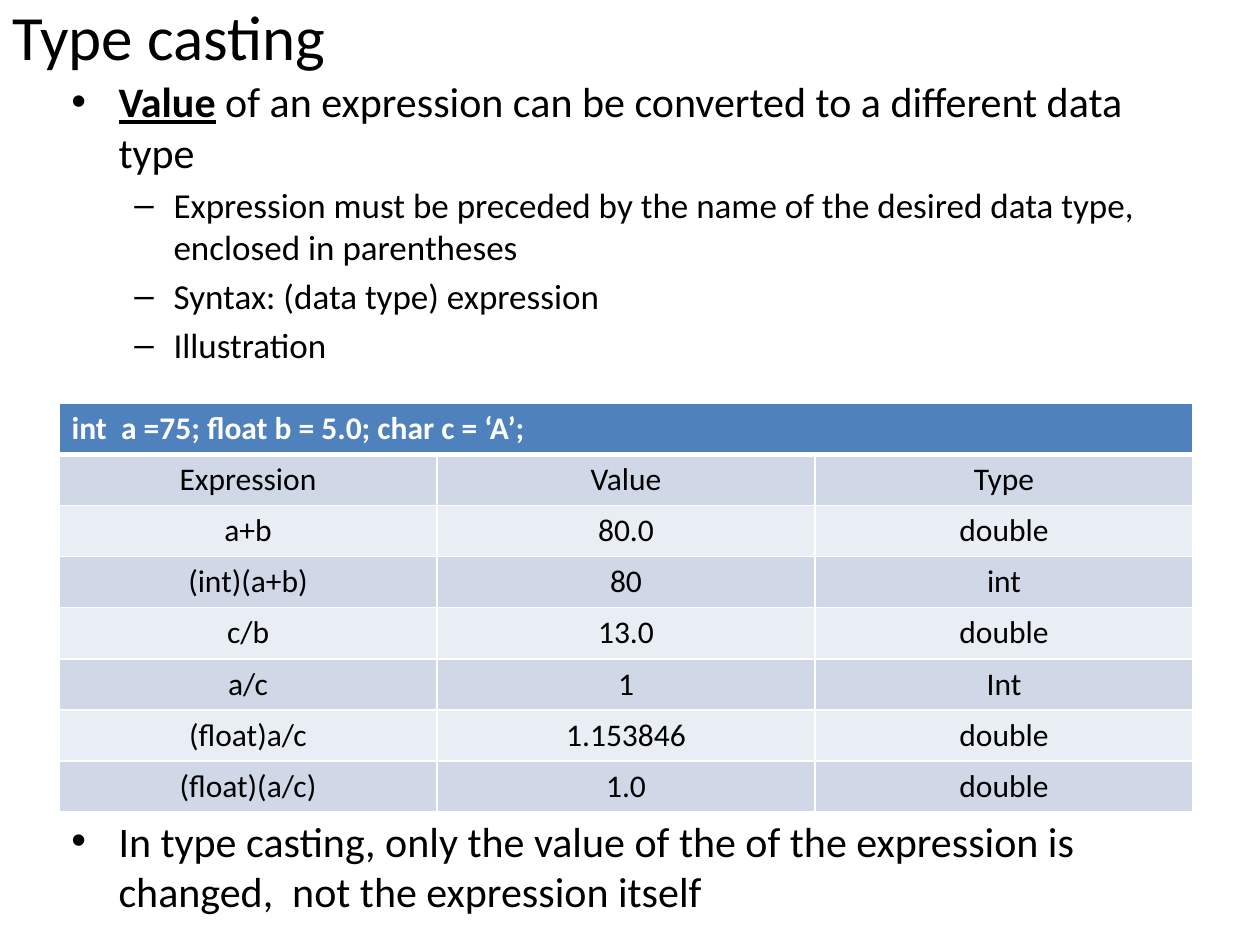
import pptx
import pptx.dml.color
import pptx.enum.text
import pptx.oxml.ns
import pptx.util
from lxml import etree

Cm = pptx.util.Cm
Pt = pptx.util.Pt
RGBColor = pptx.dml.color.RGBColor

BLACK = RGBColor(0x00, 0x00, 0x00)
WHITE = RGBColor(0xFF, 0xFF, 0xFF)
HEADER_BLUE = RGBColor(0x4F, 0x81, 0xBD)
BAND_DARK = RGBColor(0xD0, 0xD8, 0xE8)
BAND_LIGHT = RGBColor(0xE9, 0xED, 0xF4)

FONT = "Calibri"
LEFT = Cm(1.19)
CONTENT_WIDTH = Cm(22.86)
ROW_HEIGHT = Cm(1.03)

# Per level: bullet, text indent, hanging indent, text size
LEVELS = [
    ("•", Cm(0.95), Cm(0.95), 24),
    ("–", Cm(2.06), Cm(0.79), 20),
]
SPACE_BELOW_ILLUSTRATION = Pt(257)  # leaves room for the table

DECLARATION = "int  a =75; float b = 5.0; char c = ‘A’;"
ROWS = [
    ("Expression", "Value", "Type"),
    ("a+b", "80.0", "double"),
    ("(int)(a+b)", "80", "int"),
    ("c/b", "13.0", "double"),
    ("a/c", "1", "Int"),
    ("(float)a/c", "1.153846", "double"),
    ("(float)(a/c)", "1.0", "double"),
]


def format_runs(paragraph, size, color=BLACK, bold=False):
    for run in paragraph.runs:
        run.font.name = FONT
        run.font.size = Pt(size)
        run.font.color.rgb = color
        run.font.bold = bold


def add_child(parent, tag, **attributes):
    child = etree.SubElement(parent, pptx.oxml.ns.qn(tag))
    for name, value in attributes.items():
        child.set(name, str(value))
    return child


def set_title(slide, text):
    title = slide.shapes.title
    title.left, title.top, title.width, title.height = 0, 0, Cm(22.86), Cm(1.42)
    frame = title.text_frame
    frame.text = text
    frame.auto_size = pptx.enum.text.MSO_AUTO_SIZE.NONE
    frame.vertical_anchor = pptx.enum.text.MSO_ANCHOR.MIDDLE
    paragraph = frame.paragraphs[0]
    paragraph.alignment = pptx.enum.text.PP_ALIGN.LEFT
    format_runs(paragraph, 36)


def format_bullet(paragraph, level):
    bullet, indent, hanging, size = LEVELS[level]
    paragraph.level = level
    paragraph.space_before = Pt(size * 0.2)
    format_runs(paragraph, size)
    properties = paragraph._p.get_or_add_pPr()
    properties.set("marL", str(indent))
    properties.set("indent", str(-hanging))
    add_child(properties, "a:buFont", typeface="Arial")
    add_child(properties, "a:buChar", char=bullet)


def add_bullets(slide):
    items = [
        (0, "Value"),
        (1, "Expression must be preceded by the name of the desired data type, "
            "enclosed in parentheses"),
        (1, "Syntax: (data type) expression"),
        (1, "Illustration"),
        (0, "In type casting, only the value of the of the expression is changed,  "
            "not the expression itself"),
    ]
    box = slide.shapes.add_textbox(LEFT, Cm(1.4), CONTENT_WIDTH, Cm(15.24))
    frame = box.text_frame
    frame.word_wrap = True
    frame.text = "\n".join(text for _, text in items)
    first, last = frame.paragraphs[0], frame.paragraphs[-1]
    first.add_run().text = " of an expression can be converted to a different data type"
    for paragraph, (level, _) in zip(frame.paragraphs, items):
        format_bullet(paragraph, level)
    first.runs[0].font.bold = True
    first.runs[0].font.underline = True
    last.space_before = SPACE_BELOW_ILLUSTRATION


def format_cell(cell, fill, bottom_border=1):
    """Give the cell white borders and a plain fill."""
    properties = cell._tc.get_or_add_tcPr()
    borders = {"a:lnL": 1, "a:lnR": 1, "a:lnT": 1, "a:lnB": bottom_border}
    for tag, width in borders.items():
        line = add_child(properties, tag, w=Pt(width))
        add_child(add_child(line, "a:solidFill"), "a:srgbClr", val=WHITE)
    cell.fill.solid()
    cell.fill.fore_color.rgb = fill


def add_cast_table(slide):
    row_count, column_count = len(ROWS) + 1, len(ROWS[0])
    table = slide.shapes.add_table(
        row_count, column_count, LEFT, Cm(8.13), CONTENT_WIDTH, ROW_HEIGHT * row_count
    ).table
    for column in range(column_count):
        format_cell(table.cell(0, column), HEADER_BLUE, bottom_border=3)
    header = table.cell(0, 0)
    header.merge(table.cell(0, column_count - 1))
    header.text_frame.text = DECLARATION
    format_runs(header.text_frame.paragraphs[0], 18, WHITE, bold=True)

    for row, values in enumerate(ROWS, start=1):
        fill = BAND_DARK if row % 2 else BAND_LIGHT
        for column, value in enumerate(values):
            cell = table.cell(row, column)
            format_cell(cell, fill, bottom_border=1)
            cell.text_frame.text = value
            paragraph = cell.text_frame.paragraphs[0]
            paragraph.alignment = pptx.enum.text.PP_ALIGN.CENTER
            format_runs(paragraph, 18)


def main():
    presentation = pptx.Presentation()
    presentation.slide_width = Cm(25.4)
    presentation.slide_height = Cm(19.05)
    slide = presentation.slides.add_slide(presentation.slide_layouts[5])
    set_title(slide, "Type casting")
    add_bullets(slide)
    add_cast_table(slide)
    presentation.save("out.pptx")


if __name__ == "__main__":
    main()
